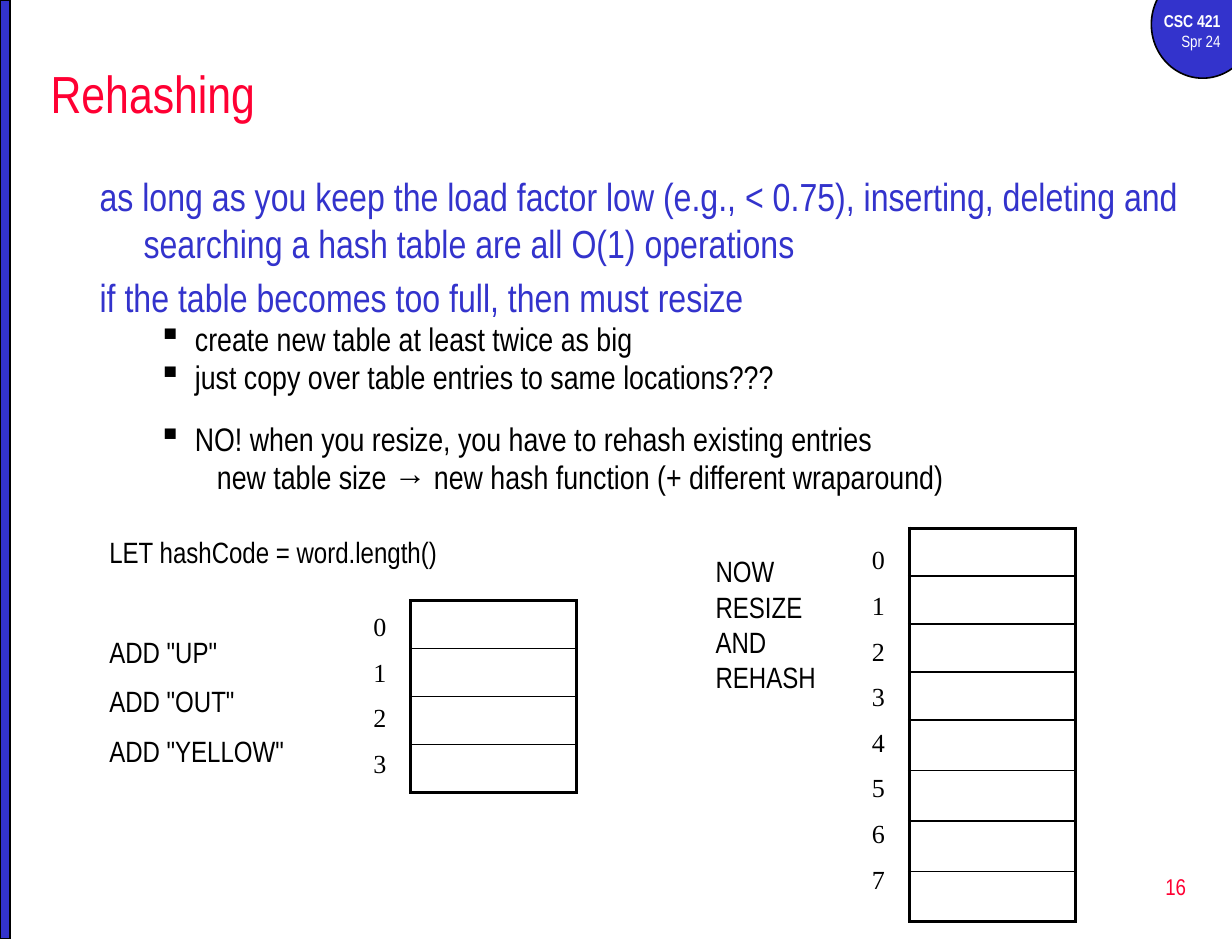
"""Build the slide on rehashing a hash table that has grown too full."""
from lxml.etree import SubElement
from pptx import Presentation
from pptx.dml.color import RGBColor
from pptx.enum.shapes import MSO_SHAPE as Shape
from pptx.enum.text import MSO_ANCHOR as Anchor, PP_ALIGN as Align
from pptx.oxml import parse_xml
from pptx.oxml.ns import nsdecls, qn
from pptx.util import Pt

NARROW, SERIF = "Arial Narrow", "Times New Roman"
BLUE, RED, BLACK, WHITE = "3333CC", "FF0033", "000000", "FFFFFF"


def color(hex_code):
    return RGBColor.from_string(hex_code)


def add_text(place, lines, size, hex_code=BLACK, font=NARROW, align=Align.LEFT, anchor=Anchor.TOP):
    box = page.shapes.add_textbox(*map(Pt, place))
    frame = box.text_frame
    frame.word_wrap = True
    frame.vertical_anchor = anchor
    for index, (text, before) in enumerate(lines):
        para = frame.paragraphs[0] if index == 0 else frame.add_paragraph()
        para.alignment = align
        para.space_before = Pt(before)
        span = para.add_run()
        span.text = text
        span.font.name = font
        span.font.size = Pt(size)
        span.font.color.rgb = color(hex_code)
    return frame.paragraphs


deck = Presentation()
deck.slide_width, deck.slide_height = Pt(756), Pt(576)
page = deck.slides.add_slide(deck.slide_layouts[6])

for kind, place in [(Shape.OVAL, (706.5, -18, 63, 66)), (Shape.RECTANGLE, (0, 0, 6, 576))]:
    ornament = page.shapes.add_shape(kind, *map(Pt, place))
    ornament.shadow.inherit = False
    ornament.fill.solid()
    ornament.fill.fore_color.rgb = color(BLUE)
    ornament.line.color.rgb = color(BLACK)
    ornament.line.width = Pt(1)

course = add_text((696, 3, 60, 33), [("CSC 421", 0), ("Spr 24", 0)], 10, WHITE, align=Align.RIGHT)
course[0].runs[0].font.size = Pt(10.5)
course[0].runs[0].font.bold = True
add_text((577.5, 525, 157.5, 38), [("16", 0)], 14, RED, align=Align.RIGHT, anchor=Anchor.MIDDLE)
add_text((24, 30, 714, 54), [("Rehashing", 0)], 32, RED, anchor=Anchor.MIDDLE)

points = add_text((54, 102, 685.5, 138), [
    ("as long as you keep the load factor low (e.g., < 0.75), inserting, deleting and "
     "searching a hash table are all O(1) operations", 0),
    ("if the table becomes too full, then must resize", 4.3),
    ("create new table at least twice as big", 4),
    ("just copy over table entries to same locations???", 4),
], 24, BLUE)
answer = add_text((54, 258, 685.5, 66), [
    ("NO! when you resize, you have to rehash existing entries", 0),
    ("new table size → new hash function (+ different wraparound)", 4),
], 20)

for level, paras in enumerate([points[:2], points[2:] + answer[:1], answer[1:]]):
    margin, hang = [(27, 27), (58.5, 22.5), (90, 18)][level]
    for para in paras:
        para.level = level
        props = para._p.get_or_add_pPr()
        props.set("marL", str(Pt(margin)))
        props.set("indent", str(-Pt(hang)))
        if level:
            para.line_spacing = 0.8
            para.runs[0].font.size = Pt(20)
            para.runs[0].font.color.rgb = color(BLACK)
        if level == 1:
            SubElement(props, qn("a:buChar")).set("char", "▪")

hash_tables = [
    (558, 324, [29.4] * 4 + [31] * 4, 330),
    (252, 368.5, [29.4] * 4, 371),
]
for left, top, heights, labels_top in hash_tables:
    count = len(heights)
    frame = page.shapes.add_table(count, 1, Pt(left), Pt(top), Pt(102), Pt(sum(heights)))
    grid = frame.table
    grid.first_row = grid.horz_banding = False
    for index, height in enumerate(heights):
        grid.rows[index].height = Pt(height)
        cell = grid.cell(index, 0)
        cell.fill.background()
        widths = {
            "lnL": 2.25,
            "lnR": 2.25,
            "lnT": 2.25 if index == 0 else 1,
            "lnB": 2.25 if index == count - 1 else 1,
        }
        for order, (side, width) in enumerate(widths.items()):
            border = parse_xml(
                f'<a:{side} {nsdecls("a")} w="{Pt(width)}"><a:solidFill>'
                f'<a:srgbClr val="{BLACK}"/></a:solidFill></a:{side}>')
            cell._tc.get_or_add_tcPr().insert(order, border)
    labels = [(str(index), 8.8 if index else 0) for index in range(count)]
    add_text((left - 30, labels_top, 30, 27.2 * count + 7), labels, 16, font=SERIF)

add_text((60, 324, 318, 159), [
    ("LET hashCode = word.length()", 0),
    ('ADD "UP"', 39.7),
    ('ADD "OUT"', 8.8),
    ('ADD "YELLOW"', 8.8),
], 18)
add_text((432, 336, 84, 94), [("NOW RESIZE AND REHASH", 0)], 18)

deck.save("out.pptx")
